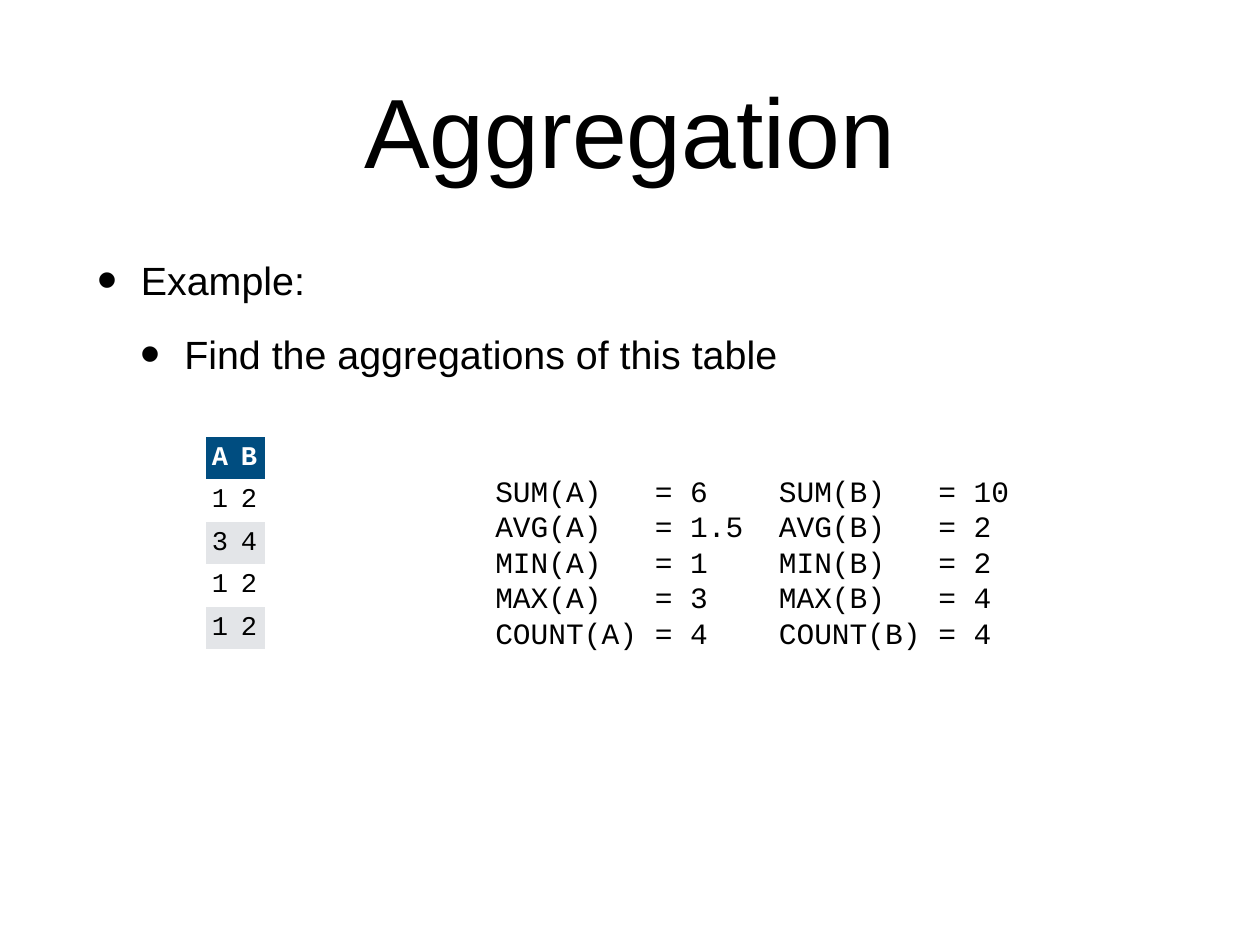
"""Build the Aggregation slide: a small table and the aggregates of its columns."""
from lxml import etree
from pptx import Presentation
from pptx.dml.color import RGBColor
from pptx.enum.text import MSO_ANCHOR, MSO_AUTO_SIZE, PP_ALIGN
from pptx.oxml.ns import qn
from pptx.util import Inches, Pt

MIDDLE, TOP = MSO_ANCHOR.MIDDLE, MSO_ANCHOR.TOP
CENTER, LEFT = PP_ALIGN.CENTER, PP_ALIGN.LEFT
NO_AUTOFIT = MSO_AUTO_SIZE.NONE

SANS, MONO = "Arial", "Courier New"
BLACK, WHITE, NAVY, GRAY = "000000", "FFFFFF", "004D80", "E3E5E8"
PLAIN_TABLE_STYLE = "{2D5ABB26-0587-4C30-8999-92F81FD0307C}"

TITLE = "Aggregation"
BULLETS = ["Example:", "Find the aggregations of this table"]
TABLE_ROWS = [("A", "B"), ("1", "2"), ("3", "4"), ("1", "2"), ("1", "2")]
AGGREGATES = [
    ("SUM(A)", "= 6", "SUM(B)", "= 10"),
    ("AVG(A)", "= 1.5", "AVG(B)", "= 2"),
    ("MIN(A)", "= 1", "MIN(B)", "= 2"),
    ("MAX(A)", "= 3", "MAX(B)", "= 4"),
    ("COUNT(A)", "= 4", "COUNT(B)", "= 4"),
]

TITLE_BOX = (1.04, 0.28, 12.14, 2.36)
BODY_BOX = (1.04, 2.83, 12.14, 6.88)
AGGREGATES_BOX = (5.53, 5.28, 5.93, 1.99)
TABLE_LEFT, TABLE_TOP = 2.33, 4.93
COLUMN_WIDTH, ROW_HEIGHT = 0.33, 0.48
INSET, BULLET_INDENT = 0.06, 0.49
CHARACTER_WIDTH = 0.2
TAB_CHARACTERS = (9, 16, 25)


def rgb(value):
    return RGBColor.from_string(value)


def set_all(target, values):
    for name, value in values.items():
        setattr(target, name, value)


def place(shape, box):
    set_all(shape, dict(zip(("left", "top", "width", "height"), map(Inches, box))))


def set_margins(target):
    for side in ("left", "top", "right", "bottom"):
        setattr(target, f"margin_{side}", Inches(INSET))


def format_frame(frame, anchor):
    set_margins(frame)
    set_all(frame, {"word_wrap": True, "auto_size": NO_AUTOFIT, "vertical_anchor": anchor})


def write(paragraph, text, font, size, color=BLACK, bold=False, align=LEFT):
    paragraph.alignment = align
    run = paragraph.add_run()
    run.text = text
    set_all(run.font, {"name": font, "size": Pt(size), "bold": bold})
    run.font.color.rgb = rgb(color)


def add_property(parent, tag, **attributes):
    return etree.SubElement(parent, qn(tag), attributes)


def paragraphs(frame, count):
    return [frame.paragraphs[0]] + [frame.add_paragraph() for _ in range(count - 1)]


def add_title(slide):
    title = slide.shapes.title
    place(title, TITLE_BOX)
    format_frame(title.text_frame, MIDDLE)
    write(title.text_frame.paragraphs[0], TITLE, SANS, 80, align=CENTER)


def add_bullets(slide):
    body = slide.placeholders[1]
    place(body, BODY_BOX)
    frame = body.text_frame
    format_frame(frame, TOP)
    for level, (paragraph, text) in enumerate(zip(paragraphs(frame, len(BULLETS)), BULLETS)):
        write(paragraph, text, SANS, 32)
        set_all(paragraph, {"level": level, "space_before": Pt(22)})
        properties = paragraph._p.get_or_add_pPr()
        properties.set("marL", str(Inches(BULLET_INDENT * (level + 1))))
        properties.set("indent", str(Inches(-BULLET_INDENT)))
        add_property(properties, "a:buSzPct", val="145000")
        add_property(properties, "a:buFont", typeface=SANS)
        add_property(properties, "a:buChar", char="•")


def add_values_table(slide):
    rows, columns = len(TABLE_ROWS), len(TABLE_ROWS[0])
    table = slide.shapes.add_table(
        rows, columns, Inches(TABLE_LEFT), Inches(TABLE_TOP),
        Inches(COLUMN_WIDTH * columns), Inches(ROW_HEIGHT * rows)).table
    table.horz_banding = False
    table._tbl.tblPr.find(qn("a:tableStyleId")).text = PLAIN_TABLE_STYLE
    for column in table.columns:
        column.width = Inches(COLUMN_WIDTH)
    for r, values in enumerate(TABLE_ROWS):
        header = r == 0
        fill = NAVY if header else (GRAY if r % 2 == 0 else WHITE)
        table.rows[r].height = Inches(ROW_HEIGHT)
        for c, value in enumerate(values):
            cell = table.cell(r, c)
            set_margins(cell)
            cell.vertical_anchor = MIDDLE
            cell.fill.solid()
            cell.fill.fore_color.rgb = rgb(fill)
            write(cell.text_frame.paragraphs[0], value, MONO, 22,
                  WHITE if header else BLACK, header)


def add_aggregates(slide):
    frame = slide.shapes.add_textbox(*map(Inches, AGGREGATES_BOX)).text_frame
    format_frame(frame, TOP)
    for paragraph, parts in zip(paragraphs(frame, len(AGGREGATES)), AGGREGATES):
        write(paragraph, "\t".join(parts), MONO, 24)
        tabs = add_property(paragraph._p.get_or_add_pPr(), "a:tabLst")
        for characters in TAB_CHARACTERS:
            add_property(tabs, "a:tab", pos=str(Inches(characters * CHARACTER_WIDTH)), algn="l")


def main():
    presentation = Presentation()
    set_all(presentation, {"slide_width": Inches(14.22), "slide_height": Inches(10.67)})
    slide = presentation.slides.add_slide(presentation.slide_layouts[1])
    add_title(slide)
    add_bullets(slide)
    add_values_table(slide)
    add_aggregates(slide)
    presentation.save("out.pptx")


if __name__ == "__main__":
    main()
